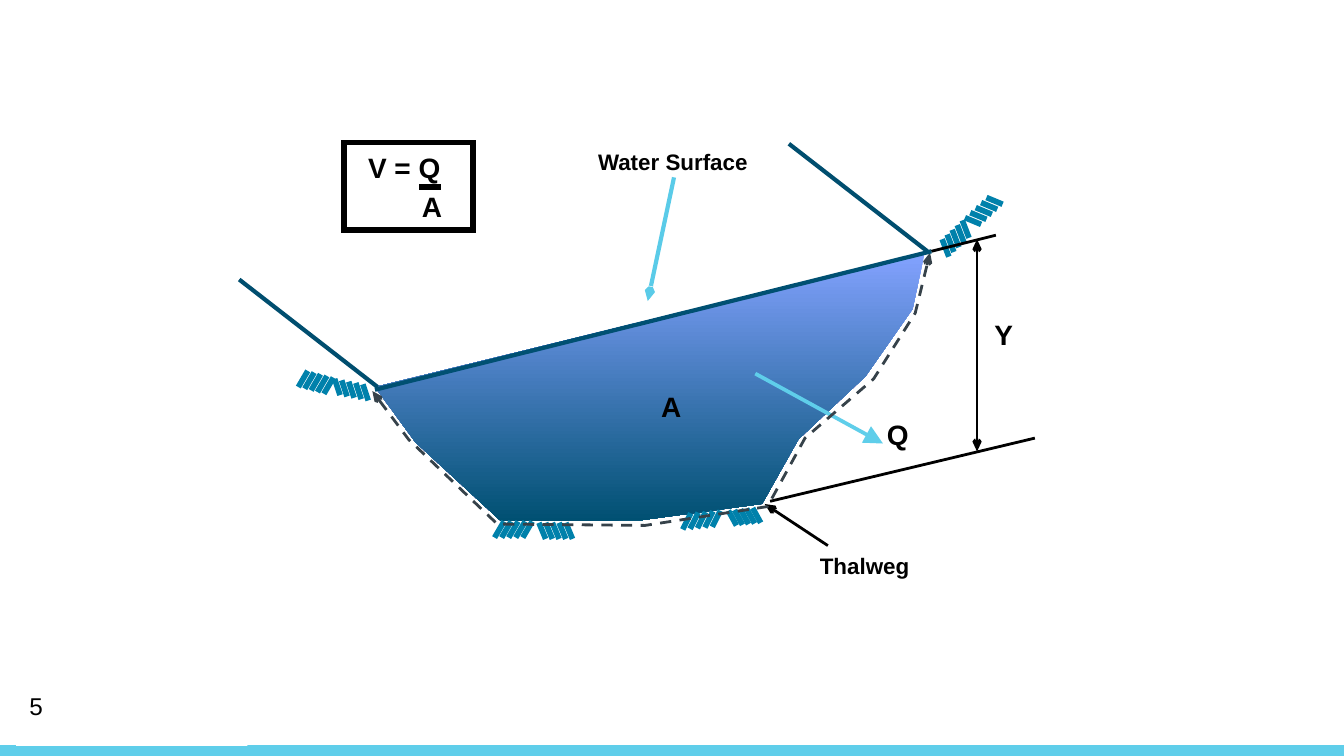
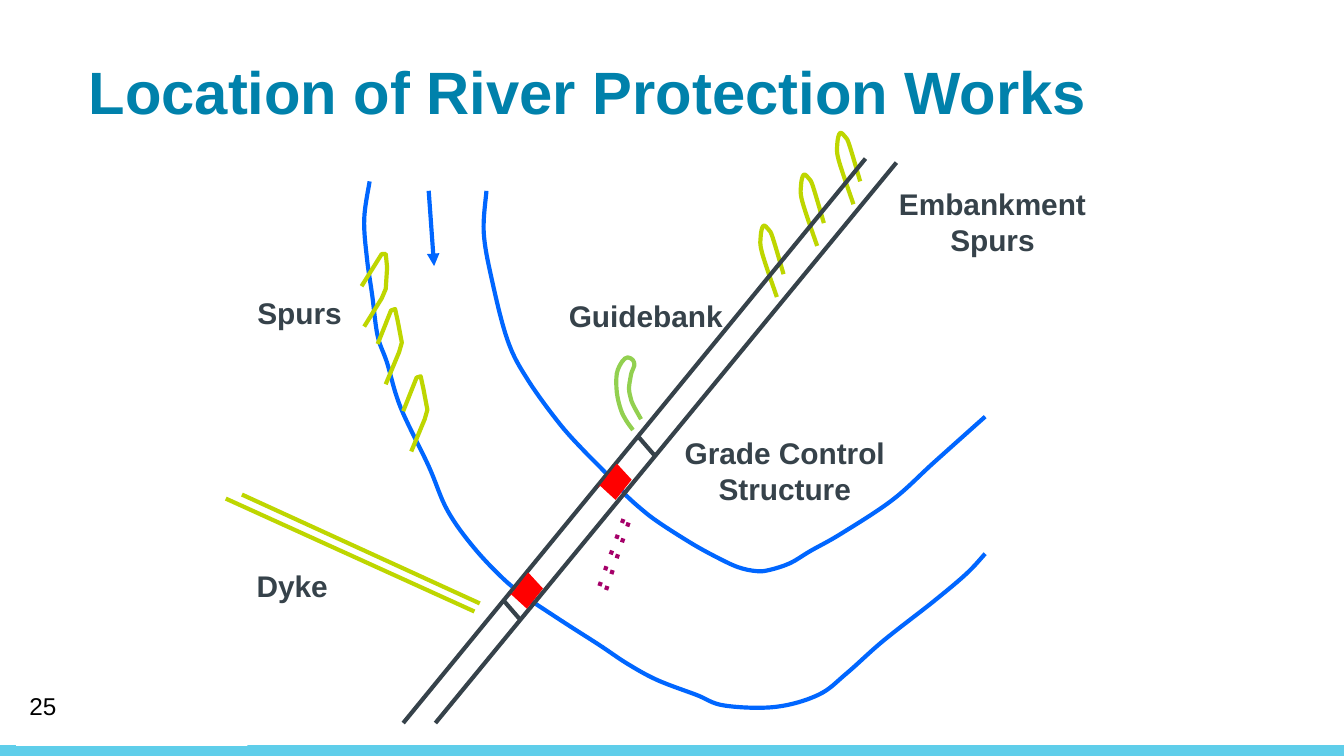
from dataclasses import dataclass
from typing import Optional

from lxml import etree
from pptx import Presentation
from pptx import util as u
from pptx.dml.color import RGBColor
from pptx.enum import shapes, text
from pptx.oxml.ns import qn

SLIDE_WIDTH = 10
SLIDE_HEIGHT = SLIDE_WIDTH * 9 / 16
BAND_HEIGHT = 0.08

FONT = "Arial"
BLACK = RGBColor(0x00, 0x00, 0x00)
WHITE = RGBColor(0xFF, 0xFF, 0xFF)
SKY = RGBColor(0x5F, 0xCE, 0xEA)
POINTER = RGBColor(0x5A, 0xCB, 0xE8)
TEAL = RGBColor(0x00, 0x81, 0xAB)
DEEP = RGBColor(0x00, 0x50, 0x72)
BANK = RGBColor(0x00, 0x4E, 0x6F)
SHALLOW = RGBColor(0x83, 0xA2, 0xFF)
SLATE = RGBColor(0x36, 0x42, 0x4A)
RIVER = RGBColor(0x00, 0x66, 0xFF)
LIME = RGBColor(0xBE, 0xD6, 0x00)
GREEN = RGBColor(0x92, 0xD0, 0x50)
PURPLE = RGBColor(0xA5, 0x00, 0x69)
RED = RGBColor(0xFF, 0x00, 0x00)

SMALL_INSETS = (0.07, 0.04)
WIDE_INSETS = (0.1, 0.05)

Point = tuple[float, float]


@dataclass(frozen=True)
class Arrow:
    type: str
    w: str = "med"
    len: str = "med"


@dataclass(frozen=True)
class Stroke:
    color: RGBColor
    width: float = 2.25
    dash: Optional[str] = None
    head: Optional[Arrow] = None
    tail: Optional[Arrow] = None


@dataclass(frozen=True)
class Line:
    start: Point
    end: Point
    stroke: Stroke


@dataclass(frozen=True)
class Label:
    words: str
    left: float
    top: float
    width: float
    height: float


@dataclass(frozen=True)
class Hatch:
    """Five parallel strokes whose starts run evenly from first to last."""
    first: Point
    last: Point
    reach: Point


SLIM = Arrow("arrow", w="sm")
HATCH_STROKE = Stroke(TEAL, 3)
THIN = Stroke(BLACK, 1.5)
ROAD = Stroke(SLATE)
WATER = Stroke(RIVER)
SPUR = Stroke(LIME)
DOTTED = Stroke(PURPLE, dash="dot")

HATCHES = [
    Hatch((2.29, 2.76), (2.48, 2.81), (-0.07, 0.12)),
    Hatch((2.49, 2.82), (2.7, 2.86), (0.04, 0.12)),
    Hatch((4.01, 3.89), (4.21, 3.89), (0.05, 0.12)),
    Hatch((3.75, 3.88), (3.96, 3.88), (-0.07, 0.12)),
    Hatch((5.14, 3.82), (5.36, 3.8), (-0.06, 0.12)),
    Hatch((5.42, 3.8), (5.6, 3.78), (0.06, 0.11)),
    Hatch((7.18, 1.62), (7.34, 1.47), (0.12, 0.05)),
    Hatch((7.01, 1.78), (7.16, 1.64), (0.05, 0.13)),
]
WATER_AREA = [(2.79, 2.88), (3.09, 3.29), (3.73, 3.88), (4.78, 3.87), (5.67, 3.75),
              (5.94, 3.27), (6.44, 2.8), (6.79, 2.3), (6.88, 1.88)]
RIVER_BED = [(2.77, 2.91), (3.04, 3.27), (3.7, 3.9), (4.8, 3.91), (5.71, 3.77),
             (5.99, 3.26), (6.5, 2.82), (6.81, 2.33), (6.92, 1.88)]
SECTION_LINES = [
    Line((6.93, 1.87), (7.41, 1.75), THIN),
    Line((6.16, 4.06), (5.69, 3.75), Stroke(BLACK, 1.5, tail=SLIM)),
    Line((5.73, 3.73), (7.7, 3.26), THIN),
    Line((7.27, 1.78), (7.27, 3.36), Stroke(BLACK, 1.5, head=SLIM, tail=SLIM)),
    Line((3.12, 1.39), (3.28, 1.39), Stroke(BLACK, 3)),
]
SURFACE_LINES = [
    Line((2.79, 2.9), (6.93, 1.87), Stroke(DEEP)),
    Line((2.81, 2.88), (1.78, 2.08), Stroke(BANK)),
    Line((6.9, 1.87), (5.87, 1.07), Stroke(BANK)),
]
SYMBOLS = [
    Label("Y", 7.3, 2.31, 0.34, 0.35),
    Label("A", 3.04, 1.36, 0.35, 0.35),
    Label("V = Q", 2.64, 1.07, 0.74, 0.35),
    Label("A", 4.82, 2.85, 0.35, 0.35),
]

RIVER_BANKS = [
    [(2.75, 1.35), (2.71, 1.63), (2.73, 1.92), (2.77, 2.2), (2.81, 2.5), (2.88, 2.7),
     (2.98, 3.03), (3.19, 3.47), (3.33, 3.8), (3.53, 4.08), (3.77, 4.33), (3.97, 4.48)],
    [(3.62, 1.42), (3.6, 1.73), (3.66, 2.08), (3.78, 2.54), (3.93, 2.83), (4.17, 3.16),
     (4.37, 3.38), (4.47, 3.48), (4.65, 3.67)],
    [(3.95, 4.47), (4.21, 4.64), (4.46, 4.8), (4.67, 4.94), (4.89, 5.06), (5.18, 5.17),
     (5.39, 5.25), (5.77, 5.26), (6.09, 5.17), (6.3, 5.01), (6.57, 4.77), (6.94, 4.48),
     (7.19, 4.27), (7.33, 4.12)],
    [(4.64, 3.67), (4.75, 3.77), (4.89, 3.88), (5.14, 4.04), (5.32, 4.14), (5.49, 4.22),
     (5.63, 4.25), (5.73, 4.24), (5.88, 4.19), (6.03, 4.1), (6.26, 3.97), (6.64, 3.72),
     (6.95, 3.44), (7.33, 3.1)],
]
EMBANKMENT_SPUR = [(5.78, 2.21), (5.67, 1.88), (5.66, 1.76), (5.68, 1.68), (5.72, 1.71),
                   (5.75, 1.77), (5.83, 2.04)]
EMBANKMENT_SHIFTS = [(0, 0), (0.3, -0.38), (0.57, -0.69)]
GUIDEBANK = [(4.71, 3.2), (4.66, 3.13), (4.62, 3.05), (4.59, 2.92), (4.59, 2.78),
             (4.63, 2.69), (4.67, 2.66), (4.71, 2.68), (4.72, 2.72), (4.7, 2.77),
             (4.69, 2.82), (4.68, 2.89), (4.69, 2.95), (4.71, 3.01), (4.77, 3.12)]
UPPER_SPUR = [(2.69, 2.13), (2.84, 1.89), (2.87, 1.89), (2.88, 1.99), (2.87, 2.15),
              (2.84, 2.22), (2.71, 2.43)]
LOWER_SPUR = [(2.81, 2.56), (2.91, 2.31), (2.94, 2.3), (2.96, 2.39), (2.99, 2.55),
              (2.97, 2.62), (2.87, 2.86)]
LOWER_SHIFTS = [(0, 0), (0.19, 0.5)]
ABUTMENT = [(3.79, 4.44), (3.93, 4.26), (4.04, 4.38), (3.92, 4.53), (3.8, 4.42)]
ABUTMENT_SHIFTS = [(0, 0), (0.66, -0.81)]
DYKE_AND_GRADE_LINES = [
    Line((1.68, 3.71), (3.53, 4.55), SPUR),
    Line((1.8, 3.68), (3.57, 4.49), SPUR),
    Line((4.46, 4.36), (4.65, 3.83), DOTTED),
    Line((4.51, 4.39), (4.69, 3.85), DOTTED),
]
FLOW_AND_ROAD_LINES = [
    Line((3.19, 1.42), (3.23, 1.98), Stroke(RIVER, tail=Arrow("triangle"))),
    Line((3, 5.38), (6.44, 1.18), ROAD),
    Line((3.24, 5.38), (6.67, 1.21), ROAD),
    Line((3.74, 4.46), (3.87, 4.61), ROAD),
    Line((4.88, 3.4), (4.75, 3.25), ROAD),
]
WORKS_LABELS = [
    Label("Embankment\nSpurs", 6.56, 1.33, 1.65, 0.64),
    Label("Guidebank", 4.09, 2.16, 1.43, 0.37),
    Label("Dyke", 1.76, 4.17, 0.83, 0.37),
    Label("Grade Control\nStructure", 4.96, 3.18, 1.76, 0.64),
    Label("Spurs", 1.8, 2.14, 0.86, 0.37),
]


def apply_stroke(shape, stroke: Stroke, miter: bool = False) -> None:
    shape.line.color.rgb = stroke.color
    shape.line.width = u.Pt(stroke.width)
    line = shape._element.spPr.find(qn("a:ln"))
    if stroke.dash:
        etree.SubElement(line, qn("a:prstDash")).set("val", stroke.dash)
    if miter:
        etree.SubElement(line, qn("a:miter")).set("lim", "800000")
    for tag, arrow in (("a:headEnd", stroke.head), ("a:tailEnd", stroke.tail)):
        if arrow:
            etree.SubElement(line, qn(tag), type=arrow.type, w=arrow.w, len=arrow.len)


def apply_fill(shape, color: Optional[RGBColor]) -> None:
    if color is None:
        shape.fill.background()
    else:
        shape.fill.solid()
        shape.fill.fore_color.rgb = color


def add_line(page, line: Line):
    ends = [u.Inches(value) for value in line.start + line.end]
    connector = page.shapes.add_connector(shapes.MSO_CONNECTOR.STRAIGHT, *ends)
    apply_stroke(connector, line.stroke)
    etree.SubElement(connector._element.spPr, qn("a:effectLst"))
    return connector


def add_hatch(page, hatch: Hatch, count: int = 5) -> None:
    for index in range(count):
        share = index / (count - 1)
        start = tuple(a + (b - a) * share for a, b in zip(hatch.first, hatch.last))
        end = tuple(a + b for a, b in zip(start, hatch.reach))
        add_line(page, Line(start, end, HATCH_STROKE))


def shifted(points: list[Point], shift: Point) -> list[Point]:
    return [(x + shift[0], y + shift[1]) for x, y in points]


def add_outline(page, points: list[Point], stroke: Optional[Stroke] = None,
                fill: Optional[RGBColor] = None, close: bool = False):
    vertices = [(u.Inches(x), u.Inches(y)) for x, y in points]
    builder = page.shapes.build_freeform(*vertices[0])
    builder.add_line_segments(vertices[1:], close=close)
    shape = builder.convert_to_shape()
    shape.shadow.inherit = False
    apply_fill(shape, fill)
    if stroke:
        apply_stroke(shape, stroke)
    else:
        shape.line.fill.background()
    return shape


def add_curve(page, points: list[Point], stroke: Stroke) -> None:
    """Draw a smooth curve through the points, with neighbours setting the tangents."""
    padded = [points[0], *points, points[-1]]
    controls = [points[0]]
    for before, start, end, after in zip(padded, padded[1:], padded[2:], padded[3:]):
        controls += [
            tuple(s + (e - b) / 6 for b, s, e in zip(before, start, end)),
            tuple(e - (a - s) / 6 for s, e, a in zip(start, end, after)),
            end,
        ]
    shape = add_outline(page, controls, stroke)
    outline = next(shape._element.iter(qn("a:path")))
    segments = outline.findall(qn("a:lnTo"))
    for index in range(0, len(segments), 3):
        bezier = etree.SubElement(outline, qn("a:cubicBezTo"))
        for segment in segments[index:index + 3]:
            bezier.append(segment[0])
            outline.remove(segment)


def write_text(frame, words: str, *, size: float, color: RGBColor = BLACK,
               bold: bool = True, align=text.PP_ALIGN.LEFT, wrap: bool = True,
               anchor=text.MSO_ANCHOR.MIDDLE, insets: Point = WIDE_INSETS) -> None:
    frame.word_wrap = wrap
    frame.auto_size = text.MSO_AUTO_SIZE.NONE
    frame.vertical_anchor = anchor
    frame.margin_left = frame.margin_right = u.Inches(insets[0])
    frame.margin_top = frame.margin_bottom = u.Inches(insets[1])
    frame.text = words
    for para in frame.paragraphs:
        para.alignment = align
        for span in para.runs:
            span.font.name = FONT
            span.font.size = u.Pt(size)
            span.font.bold = bold
            span.font.color.rgb = color


def add_label(page, label: Label, **style):
    place = [u.Inches(v) for v in (label.left, label.top, label.width, label.height)]
    box = page.shapes.add_textbox(*place)
    write_text(box.text_frame, label.words, **style)
    return box


def add_rectangle(page, left: float, top: float, width: float, height: float,
                  fill: Optional[RGBColor] = None, stroke: Optional[Stroke] = None):
    place = [u.Inches(v) for v in (left, top, width, height)]
    box = page.shapes.add_shape(shapes.MSO_SHAPE.RECTANGLE, *place)
    box.shadow.inherit = False
    apply_fill(box, fill)
    if stroke:
        apply_stroke(box, stroke, miter=True)
    else:
        box.line.fill.background()
    return box


def add_page(deck, layout: int, number: str):
    """Add a slide with the bottom band and its number."""
    page = deck.slides.add_slide(deck.slide_layouts[layout])
    add_rectangle(page, 0, SLIDE_HEIGHT - BAND_HEIGHT, SLIDE_WIDTH, BAND_HEIGHT, SKY)
    add_rectangle(page, 0.12, 5.42, 1.72, 0.13, WHITE)
    add_label(page, Label(number, 0.12, 5.1, 2.25, 0.3), size=13, bold=False)
    return page


def build_cross_section(deck) -> None:
    page = add_page(deck, 6, "5")
    area = add_outline(page, WATER_AREA, close=True)
    area.fill.gradient()
    area.fill.gradient_angle = 270
    for stop, color, position in zip(area.fill.gradient_stops, (SHALLOW, DEEP), (0, 1)):
        stop.color.rgb = color
        stop.position = position
    for hatch in HATCHES:
        add_hatch(page, hatch)
    caption = dict(size=12, wrap=False, insets=SMALL_INSETS)
    add_label(page, Label("Thalweg", 6.03, 4.07, 0.82, 0.28), **caption)
    surface = add_label(page, Label("Water Surface", 4.38, 1.08, 1.27, 0.24), **caption)
    pointer = add_line(page, Line((5.01, 1.32), (4.82, 2.24), Stroke(POINTER, tail=SLIM)))
    pointer.begin_connect(surface, 2)
    add_rectangle(page, 2.56, 1.06, 0.96, 0.65, stroke=Stroke(BLACK, 3))
    for line in SECTION_LINES:
        add_line(page, line)
    for symbol in SYMBOLS:
        add_label(page, symbol, size=15, wrap=False)
    discharge = add_rectangle(page, 6.5, 3.06, 0.36, 0.35, WHITE, Stroke(WHITE, 2))
    write_text(discharge.text_frame, "Q", size=15, wrap=False)
    flow = Stroke(SKY, 2, tail=Arrow("triangle", "lg", "lg"))
    add_line(page, Line((5.62, 2.78), (6.57, 3.3), flow))
    add_outline(page, RIVER_BED, Stroke(SLATE, 1.5, "dash", SLIM, SLIM))
    for line in SURFACE_LINES:
        add_line(page, line)


def build_protection_works(deck) -> None:
    page = add_page(deck, 5, "25")
    title = page.shapes.title
    title.left, title.top = u.Inches(0.59), u.Inches(0.37)
    title.width, title.height = u.Inches(8.99), u.Inches(0.57)
    write_text(title.text_frame, "Location of River Protection Works", size=32, color=TEAL,
               anchor=text.MSO_ANCHOR.TOP, insets=SMALL_INSETS)
    for shift in EMBANKMENT_SHIFTS:
        add_curve(page, shifted(EMBANKMENT_SPUR, shift), SPUR)
    add_curve(page, GUIDEBANK, Stroke(GREEN))
    for line in DYKE_AND_GRADE_LINES:
        add_line(page, line)
    for bank in RIVER_BANKS:
        add_curve(page, bank, WATER)
    for line in FLOW_AND_ROAD_LINES:
        add_line(page, line)
    for shift in ABUTMENT_SHIFTS:
        add_outline(page, shifted(ABUTMENT, shift), fill=RED, close=True)
    add_outline(page, UPPER_SPUR, SPUR)
    for shift in LOWER_SHIFTS:
        add_outline(page, shifted(LOWER_SPUR, shift), SPUR)
    for label in WORKS_LABELS:
        add_label(page, label, size=16, color=SLATE, align=text.PP_ALIGN.CENTER)


def main() -> None:
    deck = Presentation()
    deck.slide_width, deck.slide_height = u.Inches(SLIDE_WIDTH), u.Inches(SLIDE_HEIGHT)
    build_cross_section(deck)
    build_protection_works(deck)
    deck.save("out.pptx")


if __name__ == "__main__":
    main()
